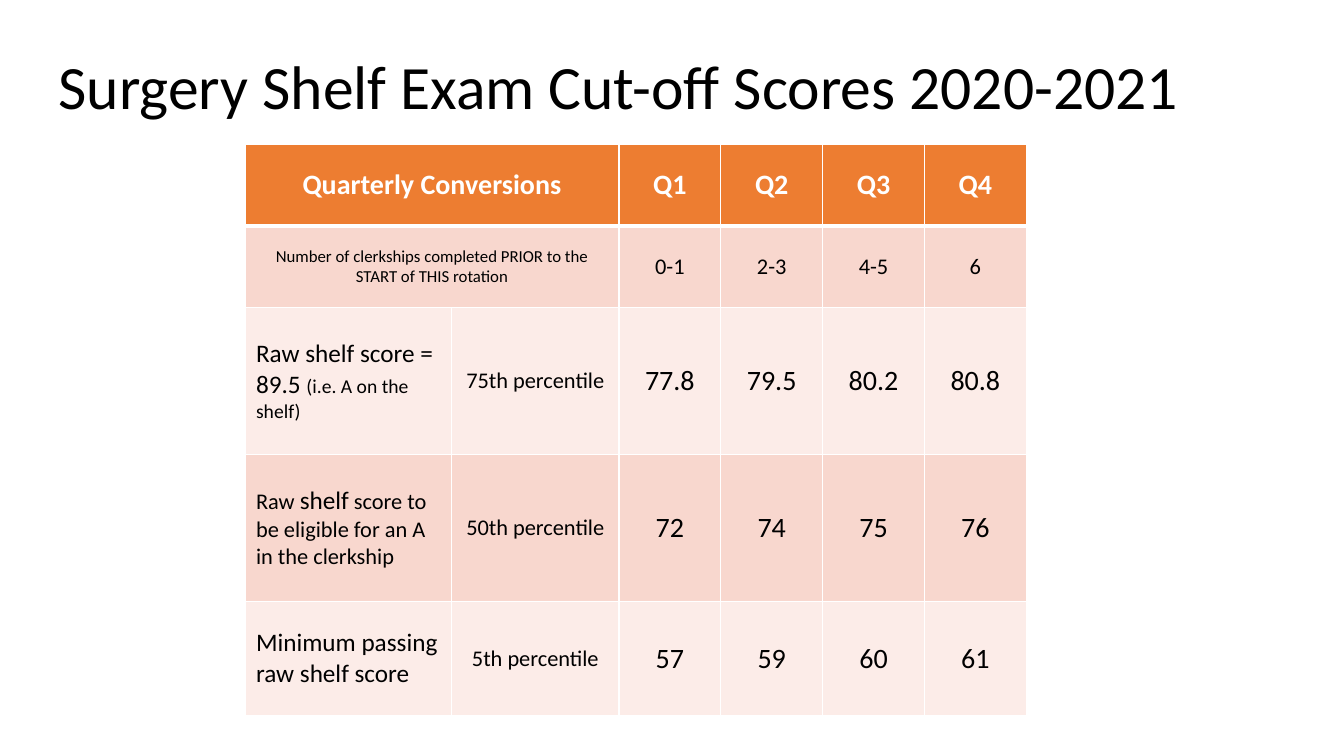
from dataclasses import dataclass

from lxml.etree import SubElement
from pptx import Presentation
from pptx.dml.color import RGBColor
from pptx.enum.text import MSO_ANCHOR as Anchor, PP_ALIGN as Align
from pptx.oxml.ns import qn
from pptx.table import _Cell as Cell
from pptx.text.text import _Paragraph as Paragraph
from pptx.util import Inches, Pt

FONT = "Calibri"
BLACK, WHITE = "000000", "FFFFFF"
ORANGE, PEACH, PALE = "ED7D31", "F8D7CE", "FCECE8"
COLUMN_WIDTHS = [2.05, 1.66] + [1.01] * 4
CELL_FORMAT = {
    "vertical_anchor": Anchor.MIDDLE,
    "margin_left": Inches(0.11),
    "margin_right": Inches(0.11),
    "margin_top": Inches(0.06),
    "margin_bottom": Inches(0.06),
}


@dataclass
class Run:
    text: str
    size: int


@dataclass
class ScoreRow:
    height: float
    fill: str
    label: list[Run]
    quarters: list[str]
    quarter_size: int = 20
    percentile: str = ""  # without one, the label spans both columns
    color: str = BLACK
    bold: bool = False
    top: float = 1
    bottom: float = 1


SCORE_ROWS = [
    ScoreRow(0.81, ORANGE, [Run("Quarterly Conversions", 20)], ["Q1", "Q2", "Q3", "Q4"],
             color=WHITE, bold=True, bottom=3),
    ScoreRow(0.81, PEACH,
             [Run("Number of clerkships completed PRIOR to the START of THIS rotation", 12)],
             ["0-1", "2-3", "4-5", "6"], quarter_size=16, top=3),
    ScoreRow(1.46, PALE, [Run("Raw shelf score = 89.5 ", 18), Run("(i.e. A on the shelf)", 14)],
             ["77.8", "79.5", "80.2", "80.8"], percentile="75th percentile"),
    ScoreRow(1.46, PEACH,
             [Run("Raw ", 16), Run("shelf", 18),
              Run(" score to be eligible for an A in the clerkship", 16)],
             ["72", "74", "75", "76"], percentile="50th percentile"),
    ScoreRow(1.13, PALE, [Run("Minimum passing raw shelf score", 18)],
             ["57", "59", "60", "61"], percentile="5th percentile"),
]


def rgb(value: str) -> RGBColor:
    return RGBColor.from_string(value)


def set_format(target: object, values: dict) -> None:
    for name, value in values.items():
        setattr(target, name, value)


def write_runs(paragraph: Paragraph, runs: list[Run], color: str, bold: bool = False) -> None:
    for part in runs:
        run = paragraph.add_run()
        run.text = part.text
        set_format(run.font, {"name": FONT, "size": Pt(part.size), "bold": bold})
        run.font.color.rgb = rgb(color)


def add_borders(cell: Cell, top: float, bottom: float) -> None:
    properties = cell._tc.get_or_add_tcPr()
    for side, width in {"L": 1, "R": 1, "T": top, "B": bottom}.items():
        line = SubElement(properties, qn(f"a:ln{side}"), w=str(Pt(width)))
        SubElement(SubElement(line, qn("a:solidFill")), qn("a:srgbClr"), val=WHITE)


def fill_cell(cell: Cell, runs: list[Run], row: ScoreRow, align: Align) -> None:
    add_borders(cell, row.top, row.bottom)
    cell.fill.solid()
    cell.fill.fore_color.rgb = rgb(row.fill)
    set_format(cell, CELL_FORMAT)
    paragraph = cell.text_frame.paragraphs[0]
    paragraph.alignment = align
    write_runs(paragraph, runs, row.color, row.bold)


def main() -> None:
    presentation = Presentation()
    set_format(presentation, {"slide_width": Inches(13.33), "slide_height": Inches(7.5)})
    slide = presentation.slides.add_slide(presentation.slide_layouts[5])

    # Title
    title = slide.shapes.title
    set_format(title, {"left": Inches(0.48), "top": Inches(0.16),
                       "width": Inches(11.94), "height": Inches(1.45)})
    title.text_frame.vertical_anchor = Anchor.MIDDLE
    heading = title.text_frame.paragraphs[0]
    set_format(heading, {"alignment": Align.LEFT, "line_spacing": 0.9})
    write_runs(heading, [Run("Surgery Shelf Exam Cut-off Scores 2020-2021", 44)], BLACK)

    # Cut-off score table
    scores = slide.shapes.add_table(
        len(SCORE_ROWS), len(COLUMN_WIDTHS), Inches(2.43), Inches(1.43),
        Inches(sum(COLUMN_WIDTHS)), Inches(sum(row.height for row in SCORE_ROWS))).table
    for column, width in zip(scores.columns, COLUMN_WIDTHS):
        column.width = Inches(width)
    for index, row in enumerate(SCORE_ROWS):
        scores.rows[index].height = Inches(row.height)
        label_align = Align.LEFT if row.percentile else Align.CENTER
        fill_cell(scores.cell(index, 0), row.label, row, label_align)
        percentile = [Run(row.percentile, 16)] if row.percentile else []
        quarters = [[Run(score, row.quarter_size)] for score in row.quarters]
        for column, runs in enumerate([percentile, *quarters], start=1):
            fill_cell(scores.cell(index, column), runs, row, Align.CENTER)
        if not row.percentile:
            scores.cell(index, 0).merge(scores.cell(index, 1))

    presentation.save("out.pptx")


if __name__ == "__main__":
    main()
